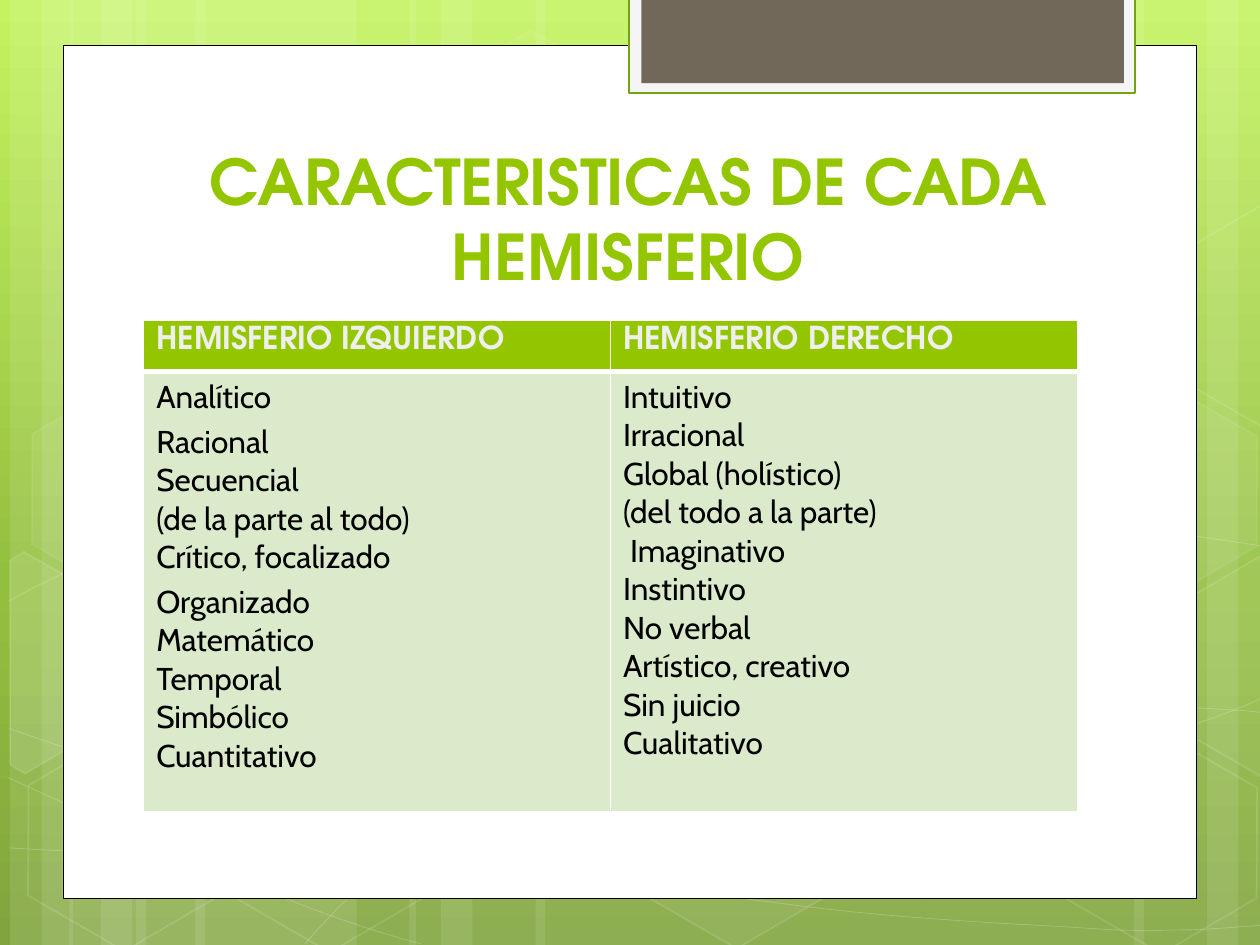
import copy
from typing import NamedTuple, Optional

import lxml.etree
import pptx
import pptx.dml.color
import pptx.enum.shapes
import pptx.enum.text
import pptx.oxml.ns
import pptx.util

Inches = pptx.util.Inches
Pt = pptx.util.Pt
RGBColor = pptx.dml.color.RGBColor
Preset = pptx.enum.shapes.MSO_SHAPE
qn = pptx.oxml.ns.qn

WHITE = RGBColor(0xFF, 0xFF, 0xFF)
BLACK = RGBColor(0, 0, 0)
LIME = RGBColor(0x94, 0xC6, 0x00)
PALE_GREEN = RGBColor(0xDC, 0xEA, 0xCC)
HEADER_TEXT = RGBColor(0xEF, 0xEF, 0xEF)
TAB_FILL = RGBColor(0xF5, 0xF5, 0xF5)
TAB_LINE = RGBColor(0x74, 0xA5, 0x10)
BROWN = RGBColor(0x71, 0x68, 0x5A)
BACKGROUND_STOPS = [
    (0, RGBColor(0xC3, 0xF3, 0x5F)),
    (0.62, RGBColor(0x93, 0xBF, 0x3F)),
    (1, RGBColor(0x81, 0xA5, 0x3E)),
]
HEADING_FONT = "TeX Gyre Adventor"
BODY_FONT = "Cabin"


class Paint(NamedTuple):
    fill: Optional[RGBColor] = WHITE
    fill_opacity: int = 100
    line: Optional[RGBColor] = None
    line_width: float = 1
    line_opacity: int = 100


class Box(NamedTuple):
    left: float
    top: float
    width: float
    height: float
    paint: Paint


class Hexagon(NamedTuple):
    left: float
    top: float
    fill_opacity: int
    line_opacity: int


class Outline(NamedTuple):
    points: list
    fill_opacity: int


class Column(NamedTuple):
    heading: str
    paragraphs: list


STRIPES = [(1.08, 1.75), (0.08, 0.5), (0.33, 0.83), (1.55, 1.75), (0.55, 0.5), (0.8, 0.83),
           (7.33, 1.75), (9.58, 0.5), (9, 0.83), (4.25, 3.08), (3.25, 0.5), (3.5, 0.83)]
CURVES = [
    [(0.07, 6.73), (0.61, 6.76), (1.15, 6.79), (1.9, 6.78), (2.65, 6.77), (3.58, 6.75),
     (4.58, 6.65), (5.58, 6.55), (7, 6.36), (7.92, 6.17), (8.83, 5.98), (9.77, 5.68),
     (10.07, 5.51)],
    [(0.07, 4.77), (0.36, 4.61), (0.65, 4.46), (1.21, 4.31), (1.78, 4.16), (2.59, 3.94),
     (3.47, 3.87), (4.36, 3.8), (5.44, 3.79), (6.54, 3.87), (7.64, 3.95), (9.47, 4.26),
     (10.07, 4.34)],
    [(0.06, 6.17), (1.27, 6.72), (2.47, 7.27), (3.34, 7.49)],
    [(0.07, 5.78), (0.38, 5.89), (0.7, 6), (1.28, 6.16), (1.86, 6.31), (2.73, 6.56),
     (3.57, 6.73), (4.4, 6.9), (5.45, 7.08), (6.28, 7.18), (7.11, 7.29), (8, 7.33),
     (8.53, 7.36), (9.05, 7.4), (9.19, 7.38), (9.45, 7.38), (9.71, 7.37), (9.89, 7.35),
     (10.07, 7.34)],
    [(2.42, 7.49), (2.6, 7.29), (2.78, 7.09), (3.02, 6.91), (3.26, 6.73), (3.6, 6.53),
     (3.88, 6.39), (4.16, 6.25), (4.33, 6.19), (4.7, 6.09), (5.06, 5.99), (5.73, 5.85),
     (6.08, 5.78), (6.44, 5.71), (6.49, 5.71), (6.8, 5.69), (7.11, 5.66), (7.6, 5.63),
     (7.94, 5.62), (8.29, 5.61), (8.86, 5.62), (8.86, 5.62), (9.08, 5.62), (9.31, 5.62),
     (9.53, 5.62), (9.71, 5.63), (9.88, 5.64), (9.97, 5.65), (10.06, 5.66), (10.03, 5.65),
     (10.06, 5.66)],
]
HEXAGONS = [
    Hexagon(3.34, 0.36, 4, 8), Hexagon(4.97, 5.89, 6, 12), Hexagon(0.11, 5.91, 0, 12),
    Hexagon(0.14, 3.12, 7, 8), Hexagon(1.74, 5.92, 0, 12), Hexagon(8.34, 5.93, 0, 12),
    Hexagon(8.34, 3.14, 7, 8),
]
CUT_HEXAGONS = [
    Outline([(0.08, 4.45), (0.19, 4.38), (0.96, 4.82), (0.95, 5.7), (0.2, 6.14), (0.08, 6.07)], 10),
    Outline([(9.26, 4.85), (10.01, 4.41), (10.09, 4.46), (10.09, 6.13), (10.02, 6.17), (9.26, 5.73)], 4),
    Outline([(9.26, 2.07), (10.01, 1.63), (10.1, 1.68), (10.09, 3.35), (10.02, 3.39), (9.26, 2.95)], 0),
]
FRAMES = [
    Box(0.5, 0.36, 9, 6.77, Paint(line=BLACK, line_width=0.5)),
    Box(4.99, -0.02, 4.02, 0.76, Paint(TAB_FILL, line=TAB_LINE, line_width=1.25)),
    Box(5.09, -0.02, 3.83, 0.68, Paint(BROWN)),
]
COLUMNS = [
    Column("HEMISFERIO IZQUIERDO", [
        ["Analítico"],
        ["Racional", "Secuencial", "(de la parte al todo)", "Crítico, focalizado"],
        ["Organizado", "Matemático", "Temporal", "Simbólico", "Cuantitativo"],
    ]),
    Column("HEMISFERIO DERECHO", [
        ["Intuitivo", "Irracional", "Global (holístico)", "(del todo a la parte)", " Imaginativo",
         "Instintivo", "No verbal", "Artístico, creativo", "Sin juicio", "Cualitativo"],
    ]),
]


def set_opacity(fill, color: RGBColor, opacity: int) -> None:
    fill.solid()
    fill.fore_color.rgb = color
    if opacity < 100:
        color_element = fill._xPr.find(qn("a:solidFill"))[0]
        lxml.etree.SubElement(color_element, qn("a:alpha"), val=str(opacity * 1000))


def apply_paint(shape, paint: Paint) -> None:
    shape.shadow.inherit = False
    if paint.fill is None or paint.fill_opacity == 0:
        shape.fill.background()
    else:
        set_opacity(shape.fill, paint.fill, paint.fill_opacity)
    if paint.line is None:
        shape.line.fill.background()
    else:
        shape.line.width = Pt(paint.line_width)
        set_opacity(shape.line.fill, paint.line, paint.line_opacity)


def draw_box(slide, box: Box) -> None:
    shape = slide.shapes.add_shape(Preset.RECTANGLE, *map(Inches, box[:4]))
    apply_paint(shape, box.paint)


def draw_hexagon(slide, hexagon: Hexagon) -> None:
    shape = slide.shapes.add_shape(
        Preset.HEXAGON, Inches(hexagon.left), Inches(hexagon.top), Inches(1.75), Inches(1.52))
    shape.adjustments[0] = 0.285
    shape.adjustments[1] = 1.155
    shape.rotation = 30
    apply_paint(shape, Paint(WHITE, hexagon.fill_opacity, WHITE, 1, hexagon.line_opacity))


def draw_freeform(slide, points: list, paint: Paint, close: bool):
    vertices = [(Inches(x), Inches(y)) for x, y in points]
    builder = slide.shapes.build_freeform(*vertices[0])
    builder.add_line_segments(vertices[1:], close=close)
    shape = builder.convert_to_shape()
    apply_paint(shape, paint)
    return shape


def draw_curve(slide, controls: list) -> None:
    shape = draw_freeform(slide, controls, Paint(None, 0, WHITE, 0.5, 20), False)
    lines = shape._element.xpath(".//a:lnTo")
    for first in range(0, len(lines), 3):
        bezier, *others = lines[first:first + 3]
        curve = lxml.etree.Element(qn("a:cubicBezTo"))
        bezier.addprevious(curve)
        for line in (bezier, *others):
            curve.append(line[0])
            line.getparent().remove(line)


def set_background(slide) -> None:
    fill = slide.background.fill
    fill.gradient()
    fill.gradient_angle = 270
    stop_list = slide._element.xpath(".//a:gsLst")[0]
    stop_list.append(copy.deepcopy(stop_list[-1]))
    for stop, (position, color) in zip(fill.gradient_stops, BACKGROUND_STOPS):
        stop.position = position
        stop.color.rgb = color


def style_paragraph(paragraph, font_name: str, size: float, color: RGBColor, bold: bool) -> None:
    paragraph.font.name = font_name
    paragraph.font.size = Pt(size)
    paragraph.font.color.rgb = color
    paragraph.font.bold = bold


def format_cell(cell, fill: RGBColor, top: float, bottom: float) -> None:
    cell.fill.solid()
    cell.fill.fore_color.rgb = fill
    properties = cell._tc.get_or_add_tcPr()
    widths = {"a:lnL": 1, "a:lnR": 1, "a:lnT": top, "a:lnB": bottom}
    for index, (tag, width) in enumerate(widths.items()):
        border = lxml.etree.Element(qn(tag), w=str(Pt(width)))
        solid = lxml.etree.SubElement(border, qn("a:solidFill"))
        lxml.etree.SubElement(solid, qn("a:srgbClr"), val=str(WHITE))
        properties.insert(index, border)


def draw_table(slide) -> None:
    table = slide.shapes.add_table(
        2, len(COLUMNS), Inches(1.14), Inches(2.54), Inches(7.41), Inches(3.9)).table
    table.rows[0].height = Inches(0.41)
    table.rows[1].height = Inches(3.49)
    for index, column in enumerate(COLUMNS):
        header, body = table.cell(0, index), table.cell(1, index)
        header.text_frame.text = column.heading
        style_paragraph(header.text_frame.paragraphs[0], HEADING_FONT, 18, HEADER_TEXT, True)
        format_cell(header, LIME, 1, 3)
        body.text_frame.text = "\n".join("\v".join(lines) for lines in column.paragraphs)
        for number, paragraph in enumerate(body.text_frame.paragraphs):
            style_paragraph(paragraph, BODY_FONT, 18, BLACK, False)
            paragraph.space_before = Pt(3.6 if number else 0)
        format_cell(body, PALE_GREEN, 3, 1)


def draw_title(slide) -> None:
    title = slide.shapes.title
    slide.shapes._spTree.append(title._element)
    title.left, title.top, title.width, title.height = map(Inches, (1.14, 1.12, 7.69, 1.26))
    title.text_frame.text = "CARACTERISTICAS DE CADA HEMISFERIO"
    title.text_frame.word_wrap = True
    title.text_frame.vertical_anchor = pptx.enum.text.MSO_ANCHOR.BOTTOM
    paragraph = title.text_frame.paragraphs[0]
    paragraph.alignment = pptx.enum.text.PP_ALIGN.CENTER
    style_paragraph(paragraph, HEADING_FONT, 36, LIME, True)


def main() -> None:
    presentation = pptx.Presentation()
    presentation.slide_width, presentation.slide_height = Inches(10), Inches(7.5)
    slide = presentation.slides.add_slide(presentation.slide_layouts[5])
    set_background(slide)
    for left, width in STRIPES:
        draw_box(slide, Box(left, 0, width, 7.5, Paint(fill_opacity=10)))
    for controls in CURVES:
        draw_curve(slide, controls)
    for hexagon in HEXAGONS:
        draw_hexagon(slide, hexagon)
    for outline in CUT_HEXAGONS:
        draw_freeform(slide, outline.points, Paint(WHITE, outline.fill_opacity, WHITE, 1, 12), True)
    for frame in FRAMES:
        draw_box(slide, frame)
    draw_title(slide)
    draw_table(slide)
    presentation.save("out.pptx")


if __name__ == "__main__":
    main()
